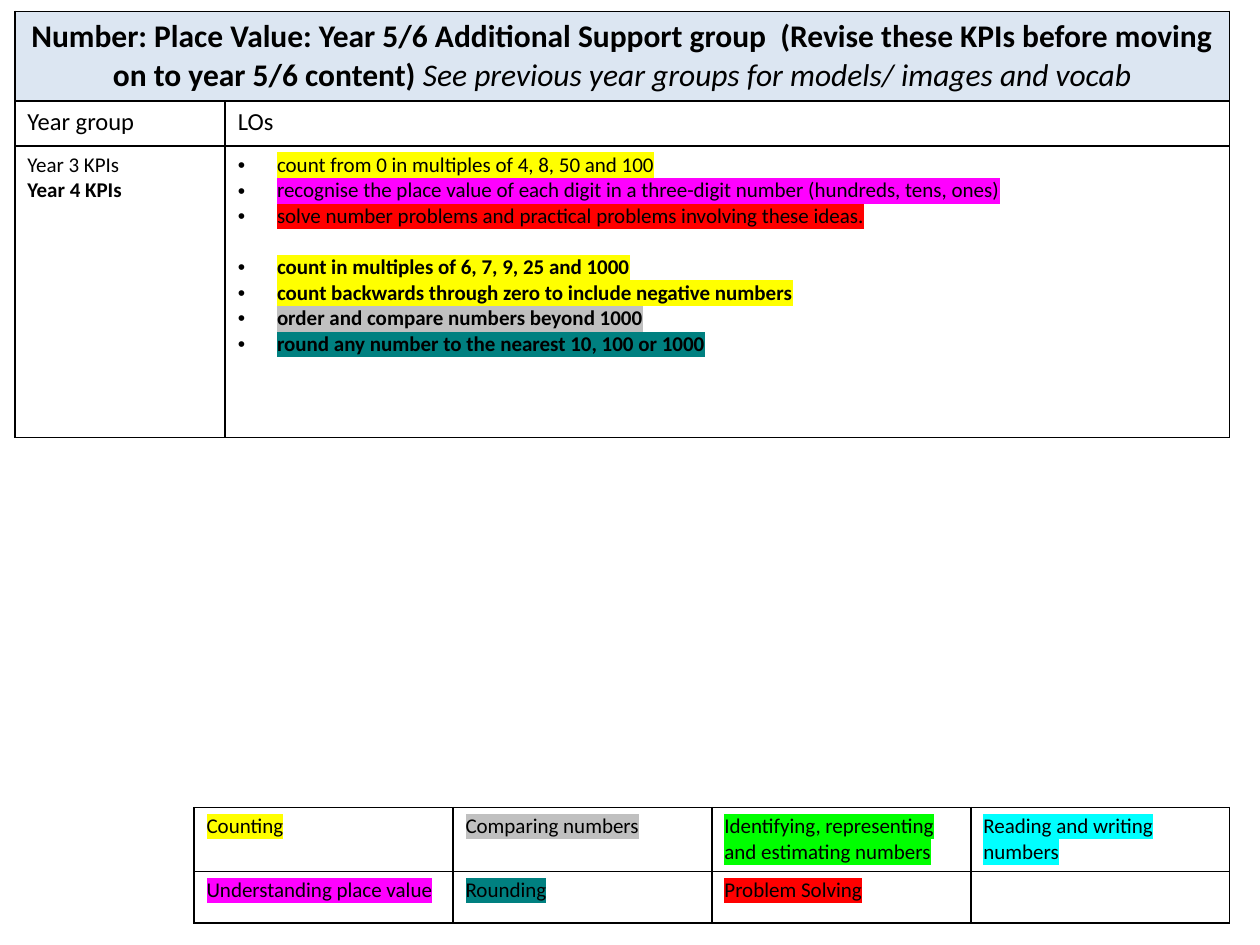
from lxml import etree
from pptx import Presentation
from pptx.dml.color import RGBColor
from pptx.enum.text import PP_ALIGN
from pptx.oxml.ns import qn
from pptx.util import Cm, Pt

CENTER = PP_ALIGN.CENTER
FONT = "Calibri"
BLACK = RGBColor(0x00, 0x00, 0x00)
TITLE_FILL = RGBColor(0xDC, 0xE6, 0xF2)
COUNTING = RGBColor(0xFF, 0xFF, 0x00)
COMPARING = RGBColor(0xC0, 0xC0, 0xC0)
IDENTIFYING = RGBColor(0x00, 0xFF, 0x00)
READING = RGBColor(0x00, 0xFF, 0xFF)
PLACE_VALUE = RGBColor(0xFF, 0x00, 0xFF)
ROUNDING = RGBColor(0x00, 0x80, 0x80)
PROBLEMS = RGBColor(0xFF, 0x00, 0x00)

YEAR_3_KPIS = [
    ("count from 0 in multiples of 4, 8, 50 and 100", COUNTING),
    ("recognise the place value of each digit in a three-digit number "
     "(hundreds, tens, ones)", PLACE_VALUE),
    ("solve number problems and practical problems involving these ideas.", PROBLEMS),
]
YEAR_4_KPIS = [
    ("count in multiples of 6, 7, 9, 25 and 1000", COUNTING),
    ("count backwards through zero to include negative numbers", COUNTING),
    ("order and compare numbers beyond 1000", COMPARING),
    ("round any number to the nearest 10, 100 or 1000", ROUNDING),
]
STRANDS = [
    [("Counting", COUNTING), ("Comparing numbers", COMPARING),
     ("Identifying, representing and estimating numbers", IDENTIFYING),
     ("Reading and writing numbers", READING)],
    [("Understanding place value", PLACE_VALUE), ("Rounding", ROUNDING),
     ("Problem Solving", PROBLEMS)],
]


def add_bordered_table(slide, left, top, column_widths, row_heights):
    """Add an unfilled table with a thin black line round every cell."""
    table = slide.shapes.add_table(
        len(row_heights), len(column_widths), left, top,
        sum(column_widths), sum(row_heights)).table
    table.first_row = table.horz_banding = False
    for column, width in zip(table.columns, column_widths):
        column.width = width
    for row, height in zip(table.rows, row_heights):
        row.height = height
    for cell in table.iter_cells():
        properties = cell._tc.get_or_add_tcPr()
        for side in ("a:lnL", "a:lnR", "a:lnT", "a:lnB"):
            line = etree.SubElement(properties, qn(side), w=str(Pt(1)))
            fill = etree.SubElement(line, qn("a:solidFill"))
            etree.SubElement(fill, qn("a:srgbClr"), val=str(BLACK))
        cell.fill.background()
    return table


def style(paragraph, size, bold=None):
    font = paragraph.font
    font.name, font.size, font.bold = FONT, Pt(size), bold
    font.color.rgb = BLACK


def add_highlighted_run(paragraph, text, color):
    run = paragraph.add_run()
    run.text = text
    highlight = etree.SubElement(run._r.get_or_add_rPr(), qn("a:highlight"))
    etree.SubElement(highlight, qn("a:srgbClr"), val=str(color))


def make_bullet(paragraph):
    properties = paragraph._p.get_or_add_pPr()
    properties.set("marL", str(Cm(0.79)))
    properties.set("indent", str(-Cm(0.79)))
    etree.SubElement(properties, qn("a:buFont"), typeface="Arial")
    etree.SubElement(properties, qn("a:buChar"), char="•")


def fill_title(cell):
    cell.fill.solid()
    cell.fill.fore_color.rgb = TITLE_FILL
    title = cell.text_frame.paragraphs[0]
    title.alignment = CENTER
    style(title, 18)
    topic = title.add_run()
    topic.text = ("Number: Place Value: Year 5/6 Additional Support group  "
                  "(Revise these KPIs before moving on to year 5/6 content) ")
    topic.font.bold = True
    reference = title.add_run()
    reference.text = "See previous year groups for models/ images and vocab"
    reference.font.italic = True


def fill_objectives(cell):
    frame = cell.text_frame
    paragraph = frame.paragraphs[0]
    for group, bold in ((YEAR_3_KPIS, False), (YEAR_4_KPIS, True)):
        for index, (objective, color) in enumerate(group):
            if paragraph.runs:
                paragraph = frame.add_paragraph()
                if index == 0:
                    paragraph.space_before = Pt(14.6)
            make_bullet(paragraph)
            style(paragraph, 12, bold)
            add_highlighted_run(paragraph, objective, color)


def add_kpi_table(slide, left, top, width):
    year_width = Cm(4.24)
    table = add_bordered_table(slide, left, top, [year_width, width - year_width],
                               [Cm(1.8), Cm(0.91), Cm(5.87)])
    table.cell(0, 0).merge(table.cell(0, 1))
    fill_title(table.cell(0, 0))
    for column, heading in enumerate(("Year group", "LOs")):
        cell = table.cell(1, column)
        cell.text = heading
        style(cell.text_frame.paragraphs[0], 14)
    years = table.cell(2, 0)
    years.text = "Year 3 KPIs\nYear 4 KPIs"
    for paragraph, bold in zip(years.text_frame.paragraphs, (False, True)):
        style(paragraph, 12, bold)
    fill_objectives(table.cell(2, 1))


def add_strand_key(slide, left, top, width):
    columns = len(STRANDS[0])
    table = add_bordered_table(slide, left, top, [width // columns] * columns,
                               [Cm(1.27), Cm(1.04)])
    for row, strands in enumerate(STRANDS):
        for column, (strand, color) in enumerate(strands):
            paragraph = table.cell(row, column).text_frame.paragraphs[0]
            style(paragraph, 12)
            add_highlighted_run(paragraph, strand, color)


def main():
    presentation = Presentation()
    presentation.slide_width, presentation.slide_height = Cm(25.4), Cm(19.05)
    slide = presentation.slides.add_slide(presentation.slide_layouts[6])
    add_kpi_table(slide, Cm(0.3), Cm(0.23), Cm(24.49))
    add_strand_key(slide, Cm(3.91), Cm(16.28), Cm(20.88))
    presentation.save("out.pptx")


if __name__ == "__main__":
    main()
